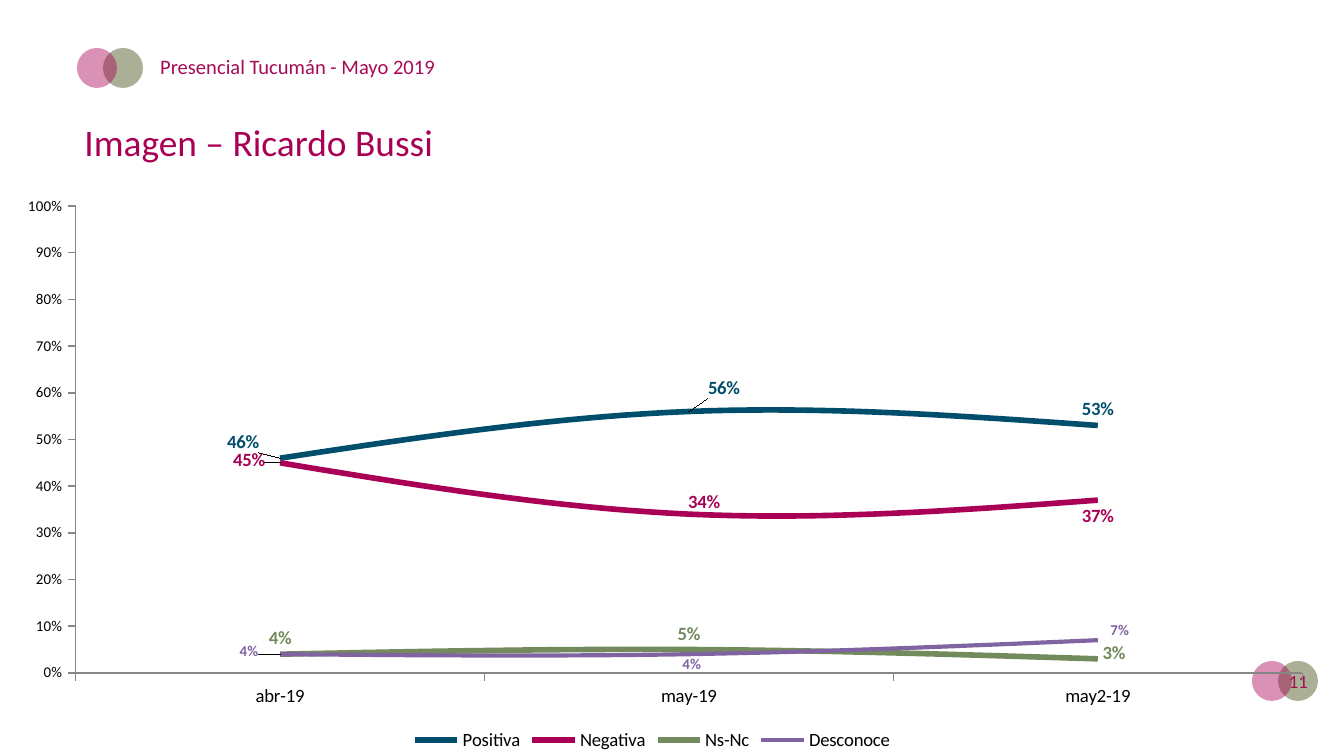
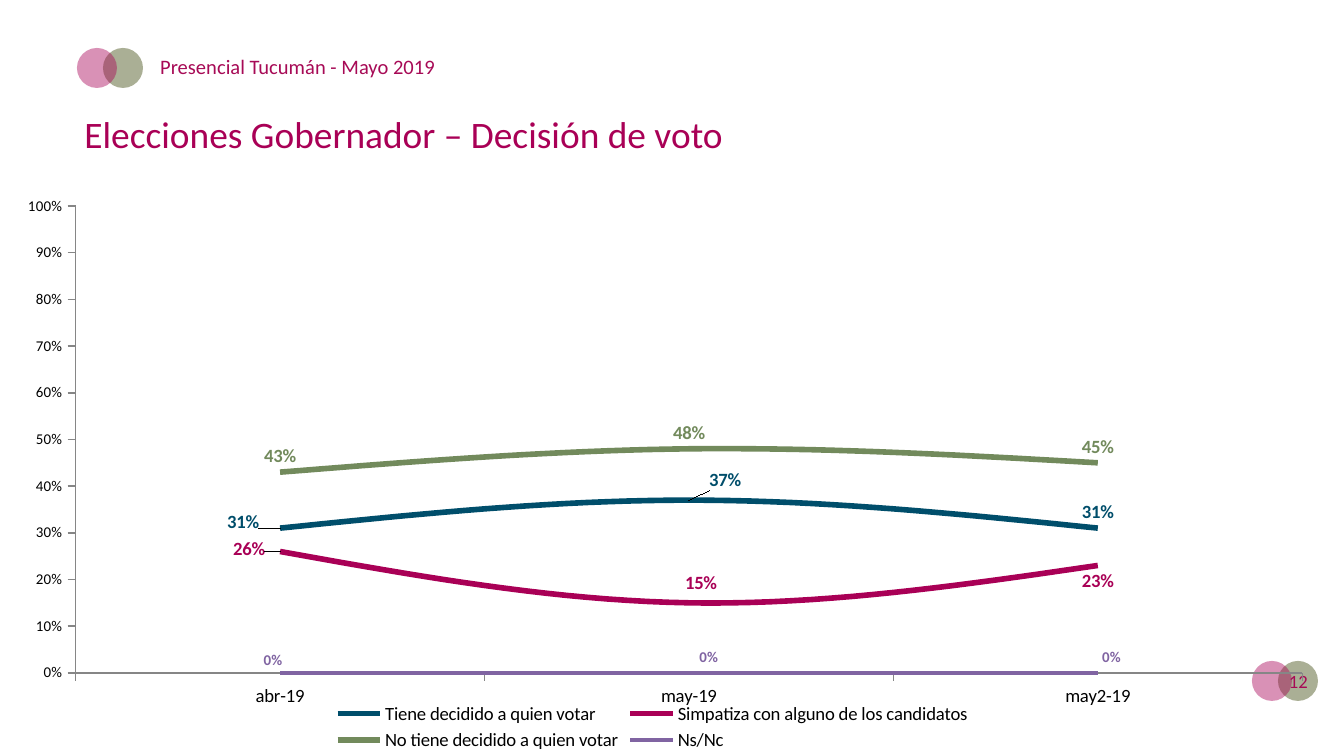
from lxml.etree import SubElement as Sub
from pptx import Presentation
from pptx.chart.data import CategoryChartData as Data
from pptx.dml.color import RGBColor as RGB
from pptx.enum.chart import XL_CHART_TYPE as Kind, XL_LABEL_POSITION as Pos
from pptx.enum.chart import XL_LEGEND_POSITION as Side, XL_MARKER_STYLE as Mark
from pptx.enum.chart import XL_TICK_MARK as Tick
from pptx.enum.shapes import MSO_SHAPE as Shape
from pptx.enum.text import MSO_ANCHOR as Anchor, MSO_AUTO_SIZE as Fit, PP_ALIGN as Align
from pptx.oxml import parse_xml
from pptx.oxml.ns import nsdecls, qn
from pptx.util import Emu, Pt

FONT = "Calibri"
COLORS = {
    "blue": "004E6B", "wine": "A90056", "green": "728A5C", "purple": "8064A2",
    "text": "A70A56", "sage": "AAAF95", "axis": "868686", "black": "000000",
}
HEAD = "Presencial Tucumán - Mayo 2019"
MONTHS = ["abr-19", "may-19", "may2-19"]
CHART = (0, 188, 1305, 568)
PLOT = {"x": 0.058, "y": 0.032, "w": 0.94, "h": 0.822}

# Colour, line width, smooth, label size and label side of each series in turn
STYLES = [
    ("blue", 3, True, 10, Pos.ABOVE),
    ("wine", 3, True, 10, Pos.BELOW),
    ("green", 3, True, 10, Pos.ABOVE),
    ("purple", 2.25, False, 8, Pos.ABOVE),
]

# Each series: name, values, label shifts in px by point
SLIDES = [
    {"page": 11, "title": "Imagen – Ricardo Bussi", "box": (71, 112, 1111, 59),
     "series": [
         ("Positiva", (0.46, 0.56, 0.53), {0: (-37, 0), 1: (35, -8)}),
         ("Negativa", (0.45, 0.34, 0.37), {0: (-31, -18), 1: (15, -28)}),
         ("Ns-Nc", (0.04, 0.05, 0.03), {2: (16, 10)}),
         ("Desconoce", (0.04, 0.04, 0.07), {0: (-31, 12), 1: (3, 25), 2: (22, 5)}),
     ]},
    {"page": 12, "title": "Elecciones Gobernador – Decisión de voto",
     "box": (71, 104, 1232, 59),
     "series": [
         ("Tiene decidido a quien votar", (0.31, 0.37, 0.31), {0: (-37, 10), 1: (36, -4)}),
         ("Simpatiza con alguno de los candidatos", (0.26, 0.15, 0.23),
          {0: (-31, -18), 1: (12, -36)}),
         ("No tiene decidido a quien votar", (0.43, 0.48, 0.45), {}),
         ("Ns/Nc", (0, 0, 0), {0: (-7, 2), 1: (20, -1), 2: (14, -1)}),
     ]},
]


def px(n):
    return Emu(round(n * 914400 / 134.4))


def rgb(name):
    return RGB.from_string(COLORS[name])


def style(font, size, color="black", bold=False):
    font.name, font.size, font.bold = FONT, Pt(size), bold
    font.color.rgb = rgb(color)


def write(shape, text, size, color, align=Align.LEFT):
    frame = shape.text_frame
    frame.text = text
    frame.word_wrap = True
    frame.auto_size = Fit.NONE
    frame.vertical_anchor = Anchor.TOP
    par = frame.paragraphs[0]
    par.alignment = align
    style(par.runs[0].font, size, color)


def add_text(slide, box, *args):
    write(slide.shapes.add_textbox(*map(px, box)), *args)


def add_rings(slide, left, top):
    """Draw a sage disc with a see-through wine disc over its left part."""
    for x, color in ((left + 26, "sage"), (left, "wine")):
        disc = slide.shapes.add_shape(Shape.OVAL, px(x), px(top), px(40), px(40))
        disc.shadow.inherit = False
        disc.line.fill.background()
        disc.fill.solid()
        disc.fill.fore_color.rgb = rgb(color)
    tint = disc._element.find(".//" + qn("a:srgbClr"))
    Sub(tint, qn("a:alpha")).set("val", "43000")


def layout(**parts):
    node = parse_xml(f"<c:layout {nsdecls('c')}><c:manualLayout/></c:layout>")
    for key, val in parts.items():
        Sub(node[0], qn("c:" + key)).set("val", str(val))
    return node


def style_axis(axis, size):
    axis.has_major_gridlines = False
    axis.major_tick_mark, axis.minor_tick_mark = Tick.OUTSIDE, Tick.NONE
    axis.format.line.color.rgb = rgb("axis")
    style(axis.tick_labels.font, size)


def style_series(series, look, shifts):
    color, width, smooth, size, pos = look
    series.smooth = smooth
    series.marker.style = Mark.NONE
    series.format.line.color.rgb = rgb(color)
    series.format.line.width = Pt(width)
    tags = series.data_labels
    tags.show_value = True
    tags.number_format, tags.number_format_is_linked = "0%", False
    tags.position = pos
    style(tags.font, size, color, True)
    for i, (dx, dy) in shifts.items():
        tag = series.points[i].data_label
        style(tag.font, size, color, True)
        tag.position = pos
        idx = series._element.xpath(f"c:dLbls/c:dLbl/c:idx[@val='{i}']")[0]
        idx.addnext(layout(x=round(dx / CHART[2], 4), y=round(dy / CHART[3], 4)))


def add_lines(slide, rows):
    data = Data(number_format="0%")
    data.categories = MONTHS
    for name, vals, _ in rows:
        data.add_series(name, vals)
    chart = slide.shapes.add_chart(Kind.LINE, *map(px, CHART), data).chart
    chart.has_title = False
    style(chart.font, 8)
    style_axis(chart.category_axis, 10)
    axis = chart.value_axis
    style_axis(axis, 8)
    axis.minimum_scale, axis.maximum_scale, axis.major_unit = 0, 1, 0.1
    axis.tick_labels.number_format = "0%"
    axis.tick_labels.number_format_is_linked = False
    chart.has_legend = True
    chart.legend.position = Side.BOTTOM
    chart.legend.include_in_layout = False
    style(chart.legend.font, 10)
    plot = chart.plots[0]
    plot.vary_by_categories = False
    for series, look, (_, _, shifts) in zip(plot.series, STYLES, rows):
        style_series(series, look, shifts)
    area = chart._chartSpace.xpath("c:chart/c:plotArea")[0]
    for old in area.findall(qn("c:layout")):
        area.remove(old)
    area.insert(0, layout(layoutTarget="inner", xMode="edge", yMode="edge", **PLOT))


def build(deck, item):
    slide = deck.slides.add_slide(deck.slide_layouts[5])
    add_rings(slide, 77, 48)
    add_rings(slide, 1252, 661)
    add_text(slide, (1223, 663, 98, 40), str(item["page"]), 10, "text", Align.RIGHT)
    add_lines(slide, item["series"])
    add_text(slide, (147, 47, 727, 54), HEAD, 11, "text")
    title = slide.shapes.title
    title.left, title.top, title.width, title.height = map(px, item["box"])
    write(title, item["title"], 20, "wine")


def main():
    deck = Presentation()
    deck.slide_width, deck.slide_height = px(1344), px(756)
    for item in SLIDES:
        build(deck, item)
    deck.save("out.pptx")


if __name__ == "__main__":
    main()
